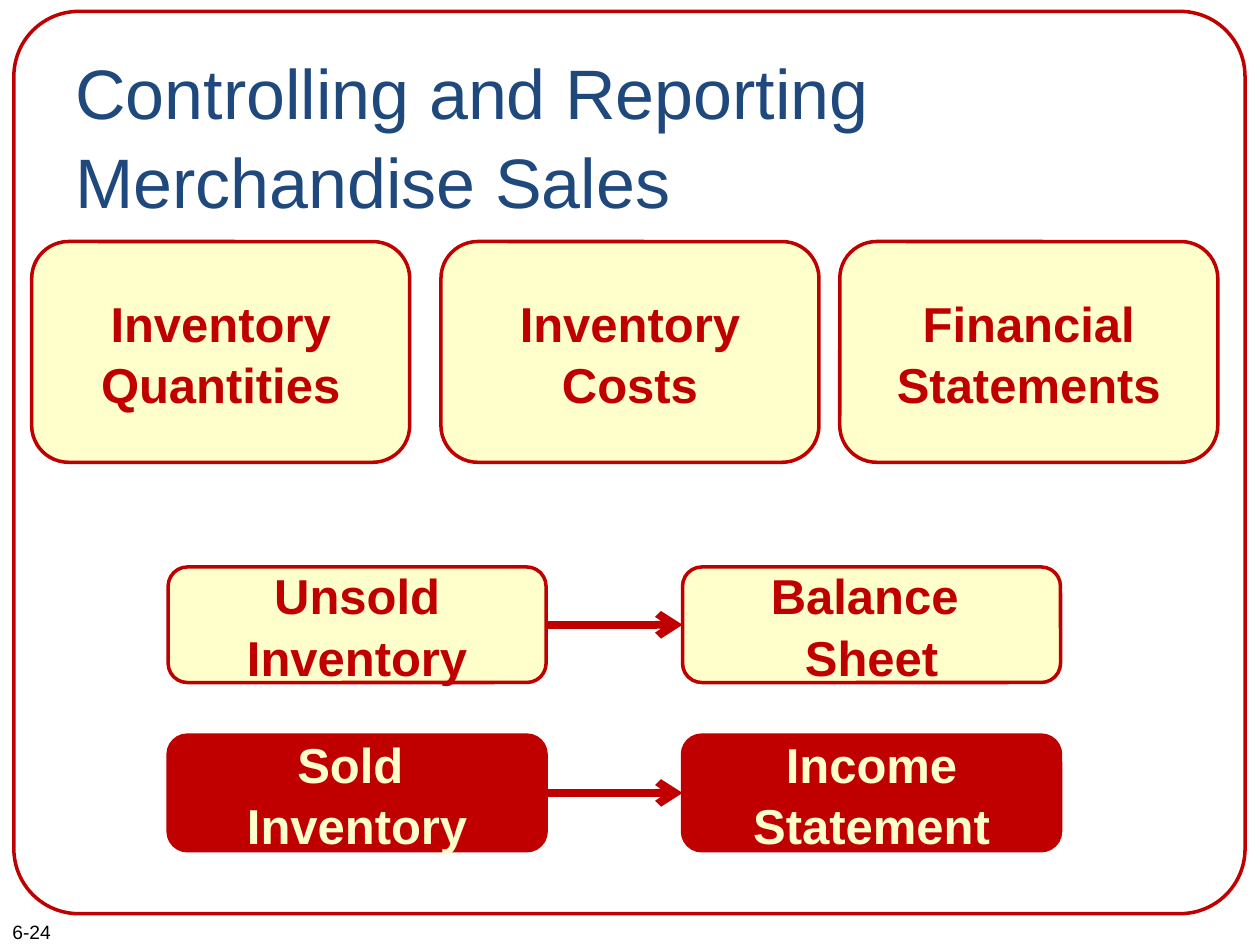
from lxml.etree import SubElement
from pptx import Presentation
from pptx.dml.color import RGBColor
from pptx.enum.shapes import MSO_CONNECTOR, MSO_SHAPE
from pptx.enum.text import MSO_ANCHOR, PP_ALIGN
from pptx.oxml.ns import qn
from pptx.util import Cm, Pt

RED = RGBColor(0xC0, 0x00, 0x00)
CREAM = RGBColor(0xFF, 0xFF, 0xCC)
NAVY = RGBColor(0x1F, 0x49, 0x7D)
BLACK = RGBColor(0x00, 0x00, 0x00)

BOX_WIDTH = 7.62


def write_text(shape, text, color, font_format, paragraph_format):
    shape.text_frame.word_wrap = True
    shape.text_frame.text = text
    paragraph = shape.text_frame.paragraphs[0]
    for name, value in paragraph_format.items():
        setattr(paragraph, name, value)
    for run in paragraph.runs:
        run.font.color.rgb = color
        for name, value in font_format.items():
            setattr(run.font, name, value)


def add_box(left, top, width, height, fill=None):
    shape = slide.shapes.add_shape(
        MSO_SHAPE.ROUNDED_RECTANGLE, Cm(left), Cm(top), Cm(width), Cm(height))
    shape.shadow.inherit = False
    shape.line.color.rgb = RED
    shape.line.width = Pt(2)
    if fill is None:
        shape.fill.background()
    else:
        shape.fill.solid()
        shape.fill.fore_color.rgb = fill
    return shape


presentation = Presentation()
presentation.slide_width = Cm(25.4)
presentation.slide_height = Cm(19.05)
slide = presentation.slides.add_slide(presentation.slide_layouts[6])

number_font = {"name": "Arial", "size": Pt(11)}
title_font = {"name": "Arial", "size": Pt(40)}
box_font = {"name": "Arial", "size": Pt(28), "bold": True}
title_paragraph = {"line_spacing": 1.05}
box_paragraph = {"alignment": PP_ALIGN.CENTER, "line_spacing": 1.05}

slide_number = slide.shapes.add_textbox(Cm(0), Cm(18.42), Cm(3.6), Cm(0.73))
write_text(slide_number, "6-24", BLACK, number_font, {})

frame = add_box(0.28, 0.23, 24.82, 18.19)
frame.adjustments[0] = 0.072

title = slide.shapes.add_textbox(Cm(1.27), Cm(0.8), Cm(22.86), Cm(3.18))
write_text(title, "Controlling and Reporting Merchandise Sales", NAVY,
           title_font, title_paragraph)

topics = [
    (0.64, "Inventory Quantities"),
    (8.89, "Inventory Costs"),
    (16.93, "Financial Statements"),
]
for left, text in topics:
    box = add_box(left, 4.87, BOX_WIDTH, 4.45, CREAM)
    box.text_frame.vertical_anchor = MSO_ANCHOR.MIDDLE
    write_text(box, text, RED, box_font, box_paragraph)

flows = [
    (11.43, CREAM, RED, ["Unsold Inventory", "Balance \vSheet"]),
    (14.82, RED, CREAM, ["Sold \vInventory", "Income Statement"]),
]
for top, fill, color, texts in flows:
    boxes = []
    for left, text in zip([3.39, 13.76], texts):
        box = add_box(left, top, BOX_WIDTH, 2.33, fill)
        box.text_frame.vertical_anchor = MSO_ANCHOR.MIDDLE
        write_text(box, text, color, box_font, box_paragraph)
        boxes.append(box)
    source, target = boxes
    arrow = slide.shapes.add_connector(MSO_CONNECTOR.STRAIGHT, 0, 0, 0, 0)
    arrow.begin_connect(source, 3)
    arrow.end_connect(target, 1)
    arrow.line.color.rgb = RED
    arrow.line.width = Pt(4.5)
    SubElement(arrow.line._get_or_add_ln(), qn("a:tailEnd"), type="arrow")
    SubElement(arrow._element.spPr, qn("a:effectLst"))

presentation.save("out.pptx")
